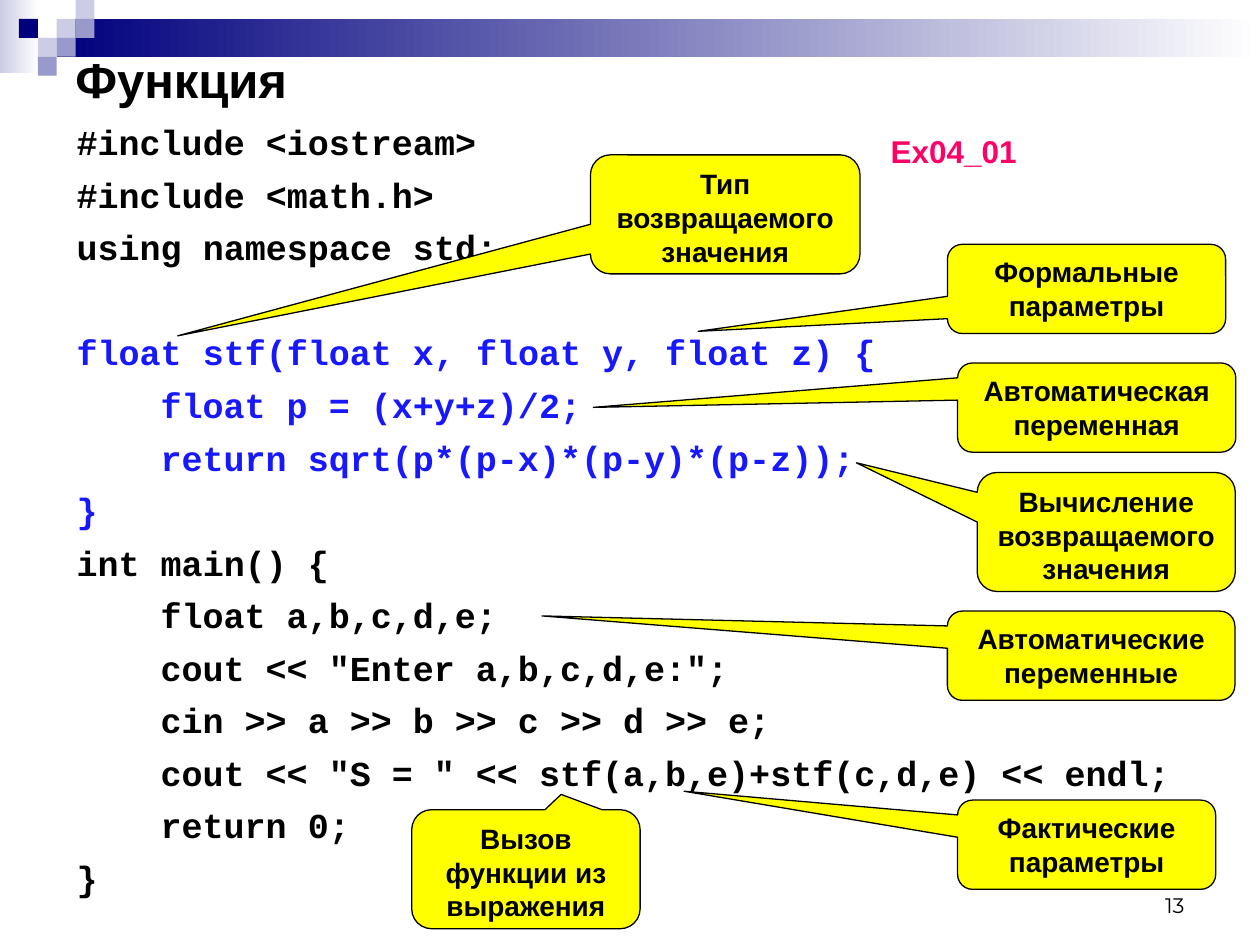
from pptx import Presentation
from pptx.dml.color import RGBColor
from pptx.enum.shapes import MSO_SHAPE
from pptx.enum.text import MSO_ANCHOR, PP_ALIGN
from pptx.util import Pt

BLACK, BLUE, PINK, YELLOW = "000000", "1818FF", "FF0066", "FFFF00"
NAVY, LAVENDER, VIOLET, WHITE = "00007D", "CCCCE6", "9999CC", "FFFFFF"
UNIT = 10.8
CODE_INDENT = 48
LINE_GAP = 6
SECTION_GAP = 36

BANDS = [
    ((0, 0, 22.3, 41.8), LAVENDER),
    ((3 * UNIT, UNIT, 720 - 3 * UNIT, 2 * UNIT), NAVY),
]
SQUARES = [
    (3, 1, LAVENDER), (4, 0, LAVENDER), (4, 1, VIOLET), (2, 2, LAVENDER),
    (1, 1, NAVY), (3, 2, VIOLET), (2, 3, VIOLET),
]
CODE = [
    (0, "#include <iostream>", BLACK),
    (0, "#include <math.h>", BLACK),
    (0, "using namespace std;", BLACK),
    (0, "float stf(float x, float y, float z) {", BLUE),
    (1, "float p = (x+y+z)/2;", BLUE),
    (1, "return sqrt(p*(p-x)*(p-y)*(p-z));", BLUE),
    (0, "}", BLUE),
    (0, "int main() {", BLACK),
    (1, "float a,b,c,d,e;", BLACK),
    (1, 'cout << "Enter a,b,c,d,e:";', BLACK),
    (1, "cin >> a >> b >> c >> d >> e;", BLACK),
    (1, 'cout << "S = " << stf(a,b,e)+stf(c,d,e) << endl;', BLACK),
    (1, "return 0;", BLACK),
    (0, "}", BLACK),
]
CALLOUTS = [
    (["Автоматическая переменная"], (547.2, 207.4, 159, 51), (-1.809, -0.002)),
    (["Автоматические переменные"], (541.4, 349.2, 164.3, 51), (-1.91, -0.446)),
    (["Тип возвращаемого значения"], (337.4, 88.5, 154, 68), (-2.032, 1.021)),
    (["Вызов", "функции из выражения"], (235.3, 462.7, 130.5, 68), (0.154, -0.629)),
    (["Вычисление", "возвращаемого значения"], (558.4, 270, 147.5, 68), (-0.968, -0.582)),
    (["Формальные параметры"], (541.4, 139.6, 159, 51), (-1.396, 0.475)),
    (["Фактические параметры"], (547.2, 457.2, 147.5, 51), (-1.56, -0.6)),
]


def rgb(color):
    """Turn a hex string into a colour."""
    return RGBColor.from_string(color)


def points(box):
    """Turn left, top, width and height into lengths."""
    return [Pt(length) for length in box]


def write(frame, lines, size=16, font="Arial", color=BLACK, bold=True,
          align=PP_ALIGN.LEFT, anchor=MSO_ANCHOR.TOP, wrap=True):
    """Fill a text frame with one paragraph per line and return the paragraphs."""
    frame.word_wrap = wrap
    frame.vertical_anchor = anchor
    frame.text = "\n".join(lines)
    for paragraph in frame.paragraphs:
        paragraph.alignment = align
        paragraph.font.size = Pt(size)
        for run in paragraph.runs:
            run.font.name = font
            run.font.size = Pt(size)
            run.font.bold = bold
            run.font.color.rgb = rgb(color)
    return frame.paragraphs


def add_label(slide, box, lines, **style):
    """Add a text box and return its paragraphs."""
    return write(slide.shapes.add_textbox(*points(box)).text_frame, lines, **style)


def add_block(slide, box, color, fade=False):
    """Add a borderless rectangle, plain or fading to white."""
    block = slide.shapes.add_shape(MSO_SHAPE.RECTANGLE, *points(box))
    block.shadow.inherit = False
    block.line.fill.background()
    if fade:
        block.fill.gradient()
        block.fill.gradient_angle = 0
        for stop, shade in zip(block.fill.gradient_stops, (color, WHITE)):
            stop.color.rgb = rgb(shade)
    else:
        block.fill.solid()
        block.fill.fore_color.rgb = rgb(color)


def add_callout(slide, lines, box, tip):
    """Add a yellow callout whose tip is an offset relative to its size."""
    callout = slide.shapes.add_shape(MSO_SHAPE.ROUNDED_RECTANGULAR_CALLOUT, *points(box))
    callout.shadow.inherit = False
    for index, value in enumerate((*tip, 0.167)):
        callout.adjustments[index] = value
    callout.fill.solid()
    callout.fill.fore_color.rgb = rgb(YELLOW)
    callout.line.color.rgb = rgb(BLACK)
    callout.line.width = Pt(0.75)
    write(callout.text_frame, lines, align=PP_ALIGN.CENTER)


def add_code(slide, box):
    """Add the program listing with indents and a gap before the function."""
    paragraphs = add_label(slide, box, [line for _, line, _ in CODE],
                           size=20, font="Courier New")
    for paragraph, (level, line, color) in zip(paragraphs, CODE):
        starts_function = line.startswith("float stf")
        paragraph.space_before = Pt(SECTION_GAP if starts_function else LINE_GAP)
        paragraph.runs[0].font.color.rgb = rgb(color)
        properties = paragraph._p.get_or_add_pPr()
        properties.set("marL", str(Pt(level * CODE_INDENT)))
        properties.set("indent", "0")


def main():
    """Build the slide and save it."""
    deck = Presentation()
    deck.slide_width, deck.slide_height = Pt(720), Pt(540)
    slide = deck.slides.add_slide(deck.slide_layouts[6])

    for box, color in BANDS:
        add_block(slide, box, color, fade=True)
    for column, row, color in SQUARES:
        add_block(slide, (column * UNIT, row * UNIT, UNIT, UNIT), color)

    add_label(slide, (516.2, 491.8, 167.8, 36), ["13"], size=12, font="Montserrat",
              bold=False, align=PP_ALIGN.RIGHT, anchor=MSO_ANCHOR.BOTTOM)
    add_label(slide, (36, 33.8, 664.6, 23), ["Функция"], size=28, anchor=MSO_ANCHOR.MIDDLE)
    add_code(slide, (36.7, 65.5, 683.3, 474.5))
    for lines, box, tip in CALLOUTS:
        add_callout(slide, lines, box, tip)
    add_label(slide, (501.8, 72, 87.1, 28.8), ["Ex04_01"], size=18, color=PINK, wrap=False)

    deck.save("out.pptx")


if __name__ == "__main__":
    main()
